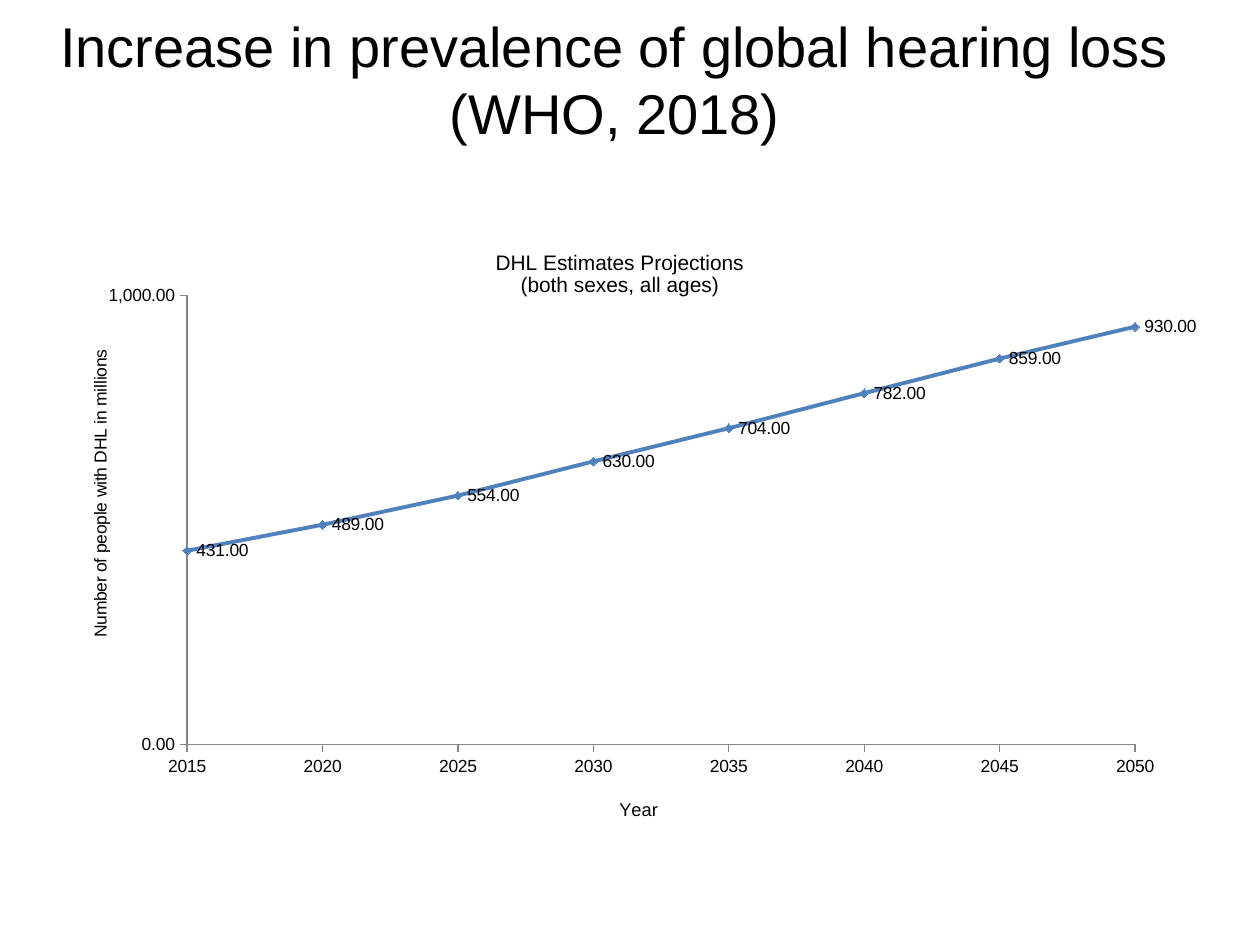
from lxml.etree import SubElement
from pptx import Presentation
from pptx.chart.data import XyChartData
from pptx.chart.datalabel import DataLabels
from pptx.dml.color import RGBColor
from pptx.enum.chart import XL_CHART_TYPE, XL_LABEL_POSITION, XL_MARKER_STYLE, XL_TICK_MARK
from pptx.enum.text import MSO_ANCHOR, PP_ALIGN
from pptx.oxml.ns import qn
from pptx.util import Inches, Pt


def style(font, size, hue="000000"):
    look = {"name": "Arial", "size": Pt(size), "bold": False}
    for key, val in look.items():
        setattr(font, key, val)
    font.color.rgb = RGBColor.from_string(hue)


def place(node, **spots):
    lay = node.find(qn("c:layout"))
    if lay is None:
        lay = SubElement(node, qn("c:layout"))
        # The layout follows the text of a title and opens a plot area
        node.insert(0 if node.find(qn("c:tx")) is None else 1, lay)
    box = SubElement(lay, qn("c:manualLayout"))
    for key, val in spots.items():
        SubElement(box, qn("c:" + key)).set("val", str(val))


deck = Presentation()
deck.slide_width, deck.slide_height = Inches(10), Inches(7.5)
slide = deck.slides.add_slide(deck.slide_layouts[5])

# Slide title
head = slide.shapes.title
spot = {"left": -0.12, "top": 0, "width": 10, "height": 1.25}
for key, val in spot.items():
    setattr(head, key, Inches(val))
frame = head.text_frame
frame.text = "Increase in prevalence of global hearing loss\v(WHO, 2018)"
frame.vertical_anchor = MSO_ANCHOR.MIDDLE
para = frame.paragraphs[0]
para.alignment = PP_ALIGN.CENTER
for run in para.runs:
    style(run.font, 32)

# Chart with one point every five years
data = XyChartData(number_format="#,##0.00")
line = data.add_series("Series 1")
counts = [431, 489, 554, 630, 704, 782, 859, 930]
for year, count in zip(range(2015, 2051, 5), counts):
    line.add_data_point(year, count)
chart = slide.shapes.add_chart(
    XL_CHART_TYPE.XY_SCATTER_SMOOTH,
    Inches(0.5), Inches(1.75), Inches(9), Inches(4.95), data).chart
chart.has_legend = False
style(chart.font, 10)
plot = chart.plots[0]
place(plot._element.getparent(), layoutTarget="inner", xMode="edge",
      yMode="edge", x=0.11, y=0.12, w=0.84, h=0.72)

# Axes
axes = [
    (chart.category_axis, 2015, 2050, 5, "0"),
    (chart.value_axis, 0, 1000, 1000, "#,##0.00"),
]
for axis, low, high, step, form in axes:
    rules = {
        "minimum_scale": low, "maximum_scale": high, "major_unit": step,
        "has_major_gridlines": False, "has_minor_gridlines": False,
        "major_tick_mark": XL_TICK_MARK.OUTSIDE,
        "minor_tick_mark": XL_TICK_MARK.NONE,
    }
    for key, val in rules.items():
        setattr(axis, key, val)
    axis.tick_labels.number_format = form
    axis.tick_labels.number_format_is_linked = False
    style(axis.tick_labels.font, 10)
    axis.format.line.color.rgb = RGBColor.from_string("868686")
    axis.format.line.width = Pt(0.75)

# Chart and axis titles
names = [
    (chart, "chart_title", "DHL Estimates Projections\n(both sexes, all ages)", 12, 0.38, 0.04),
    (chart.category_axis, "axis_title", "Year", 10.5, 0.49, 0.92),
    (chart.value_axis, "axis_title", "Number of people with DHL in millions", 10, 0.02, 0.2),
]
for owner, kind, text, size, left, top in names:
    title = getattr(owner, kind)
    title.text_frame.text = text
    for para in title.text_frame.paragraphs:
        style(para.font, size)
        for run in para.runs:
            style(run.font, size)
    place(title._element, xMode="edge", yMode="edge", x=left, y=top)

# Line, markers and value labels
plot.vary_by_categories = False
curve = plot.series[0]
curve.smooth = True
blue = RGBColor.from_string("4F81BD")
curve.format.line.color.rgb = blue
curve.format.line.width = Pt(2.25)
mark = curve.marker
mark.style, mark.size = XL_MARKER_STYLE.DIAMOND, 5
mark.format.fill.solid()
mark.format.fill.fore_color.rgb = blue
mark.format.line.color.rgb = blue
tags = DataLabels(curve._element.get_or_add_dLbls())
rules = {
    "show_value": True, "position": XL_LABEL_POSITION.RIGHT,
    "number_format": "#,##0.00", "number_format_is_linked": False,
}
for key, val in rules.items():
    setattr(tags, key, val)
style(tags.font, 10)

deck.save("out.pptx")
